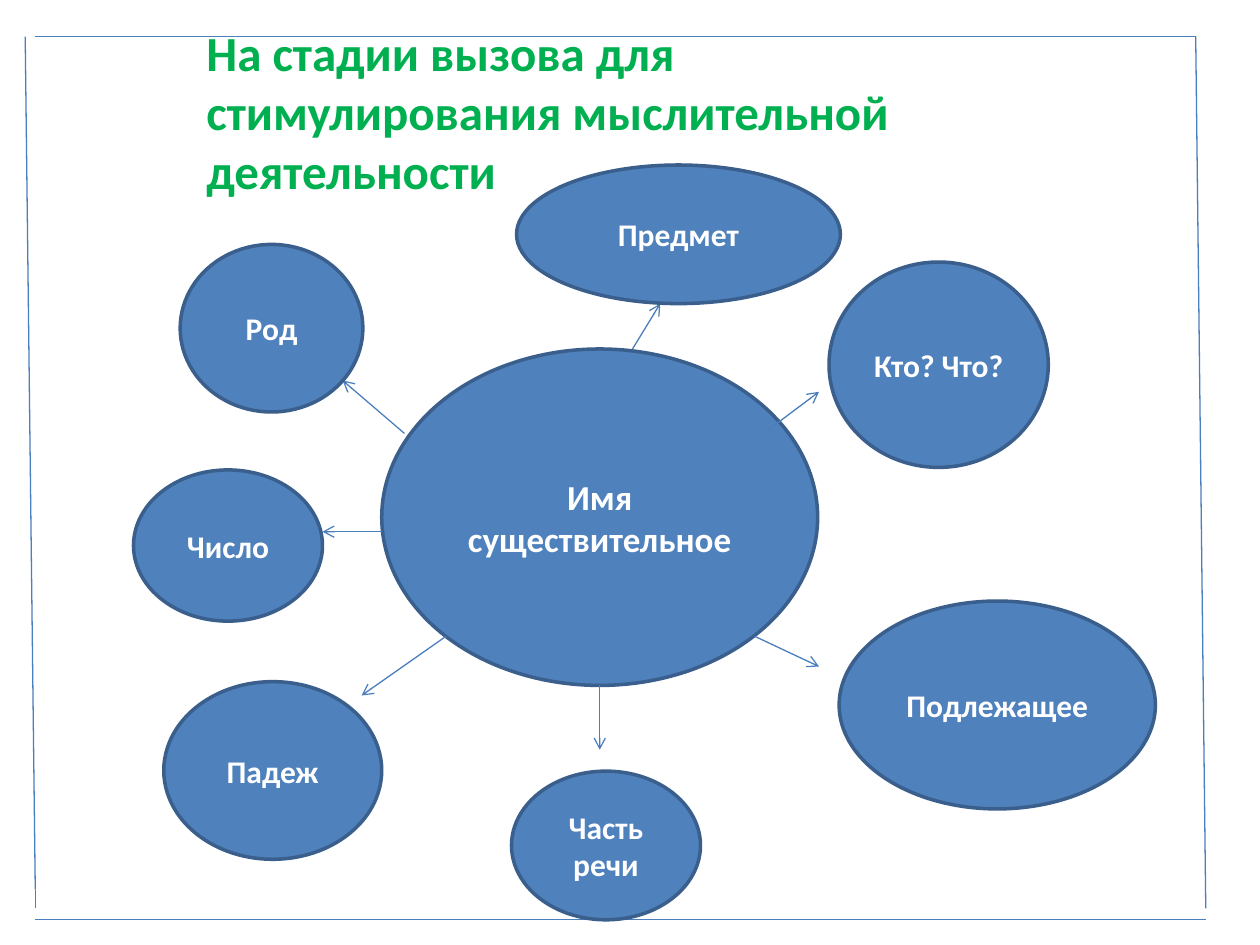
from lxml.etree import SubElement
from pptx import Presentation
from pptx.dml.color import RGBColor
from pptx.enum.shapes import MSO_CONNECTOR as CONN, MSO_SHAPE as SHAPE
from pptx.enum.text import MSO_ANCHOR as ANCHOR, PP_ALIGN as ALIGN
from pptx.oxml.ns import qn
from pptx.util import Inches, Pt

COLORS = {"fill": "4F81BD", "outline": "3A5F8C", "line": "4B7EBC",
          "title": "00B050", "text": "FFFFFF"}
WIDTH, HEIGHT = Inches(10), Inches(7.5)
COLS, ROWS = 100, 75

# Grid columns and rows: left, top, width, height
CENTER = ("Имя существительное", (30.3, 27.7, 34.6, 26.7))
TOPICS = [
    ("Кто? Что?", (65.8, 20.8, 17.4, 16.3)),
    ("Подлежащее", (66.6, 47.7, 25.1, 16.5)),
    ("Часть речи", (40.6, 61.2, 15, 11.8)),
    ("Число", (10.6, 37.3, 15, 12)),
    ("Падеж", (13, 54.1, 17.3, 14.1)),
    ("Род", (14.3, 19.4, 14.5, 13.3)),
    ("Предмет", (41, 13.1, 25.7, 11)),
]
# Start and end points of each arrow
ARROWS = [
    ((60.6, 34.4), (65, 31.1)),
    ((59.9, 50.5), (65, 52.9)),
    ((35.4, 50.5), (28.7, 55.2)),
    ((30.3, 42.2), (25.6, 42.2)),
    ((32.1, 34.4), (27.2, 30.2)),
    ((47.6, 54.4), (47.6, 59.5)),
    ((50.2, 27.7), (52.4, 24.1)),
]
FRAME = [
    ((2, 2.9), (2.8, 70.6)),
    ((2.8, 70.6), (2.8, 72.1)),
    ((94.9, 2.9), (95.7, 72.1)),
    ((2.8, 2.9), (94.9, 2.9)),
    ((2.8, 73), (95.7, 73)),
]


def color(name):
    return RGBColor.from_string(COLORS[name])


def grid(*values):
    """Turn alternating columns and rows into slide lengths."""
    units = (WIDTH / COLS, HEIGHT / ROWS)
    return [round(v * units[i % 2]) for i, v in enumerate(values)]


def write(sp, text, size, color_name, align):
    tf = sp.text_frame
    tf.word_wrap = True
    tf.text = text
    p = tf.paragraphs[0]
    p.alignment = align
    font = p.runs[0].font
    font.name, font.size, font.bold = "Calibri", Pt(size), True
    font.color.rgb = color(color_name)


def add_bubble(s, text, box, size=18):
    sp = s.shapes.add_shape(SHAPE.OVAL, *grid(*box))
    sp.shadow.inherit = False
    sp.fill.solid()
    sp.fill.fore_color.rgb = color("fill")
    sp.line.color.rgb = color("outline")
    sp.line.width = Pt(2)
    sp.text_frame.vertical_anchor = ANCHOR.MIDDLE
    write(sp, text, size, "text", ALIGN.CENTER)


def add_line(s, start, end, arrow=False):
    line = s.shapes.add_connector(CONN.STRAIGHT, *grid(*start, *end))
    line.line.color.rgb = color("line")
    line.line.width = Pt(0.75)
    props = line._element.spPr
    if arrow:
        SubElement(props.find(qn("a:ln")), qn("a:tailEnd"), type="arrow")
    SubElement(props, qn("a:effectLst"))


def add_title(s, text, box):
    sp = s.shapes.add_textbox(*grid(*box))
    write(sp, text, 28, "title", ALIGN.LEFT)


def main():
    prs = Presentation()
    prs.slide_width, prs.slide_height = WIDTH, HEIGHT
    s = prs.slides.add_slide(prs.slide_layouts[6])
    for start, end in FRAME:
        add_line(s, start, end)
    add_bubble(s, *CENTER, size=20)
    for start, end in ARROWS:
        add_line(s, start, end, arrow=True)
    for text, box in TOPICS:
        add_bubble(s, text, box)
    add_title(s, "На стадии вызова для стимулирования мыслительной деятельности",
              (15.4, 1.3, 65.3, 8.7))
    prs.save("out.pptx")


if __name__ == "__main__":
    main()
